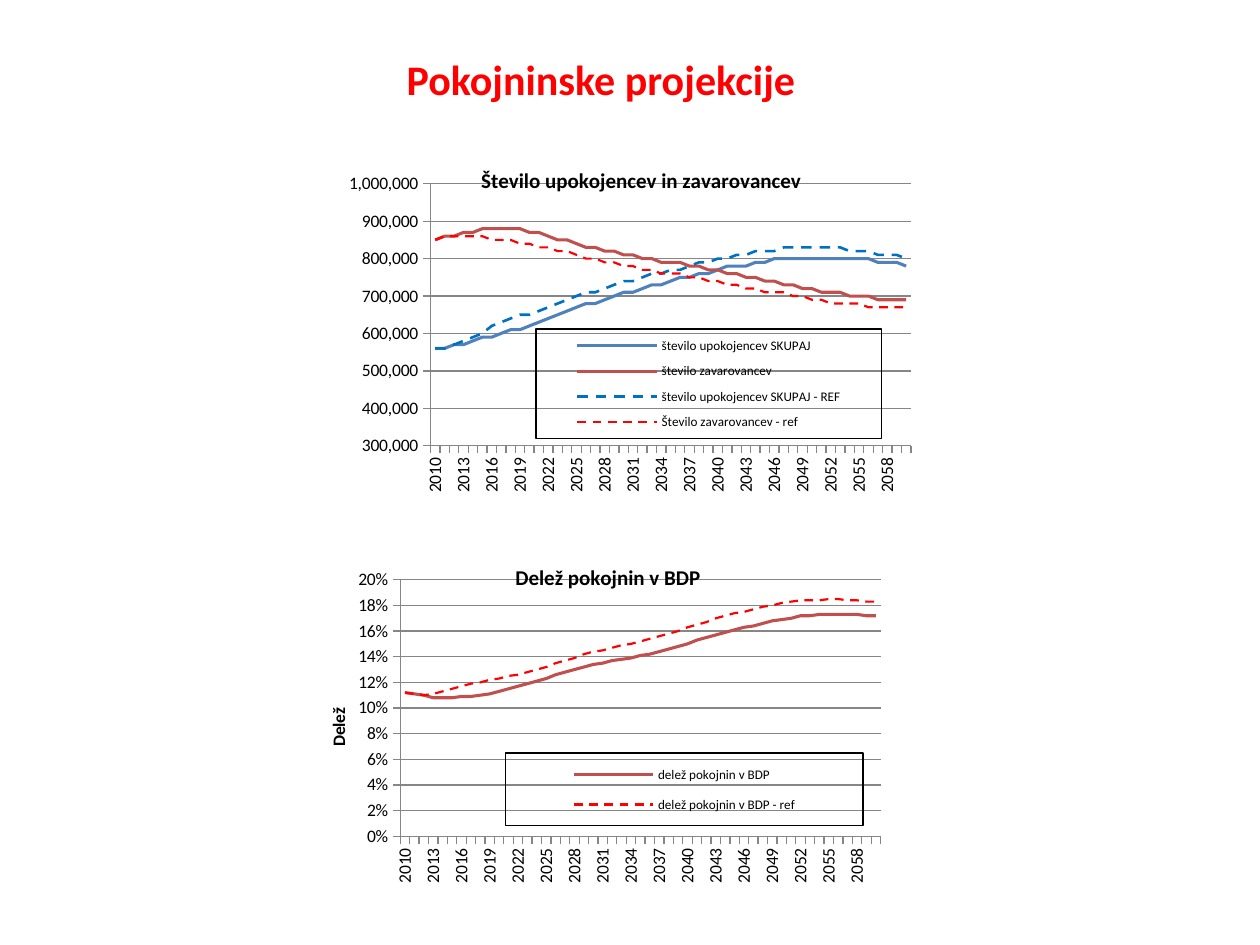
from dataclasses import dataclass

from lxml.etree import SubElement
from pptx import Presentation
from pptx.chart.data import CategoryChartData as ChartData
from pptx.dml.color import RGBColor
from pptx.enum.chart import XL_CHART_TYPE as Kind, XL_LEGEND_POSITION as Side
from pptx.enum.chart import XL_TICK_MARK as Tick
from pptx.enum.dml import MSO_LINE_DASH_STYLE as Dash
from pptx.enum.text import MSO_ANCHOR as Anchor, PP_ALIGN as Align
from pptx.oxml.ns import qn
from pptx.util import Pt

FONT = "Calibri"
BLACK = RGBColor(0, 0, 0)
GREY = RGBColor(0x86, 0x86, 0x86)
RED = RGBColor(0xFF, 0, 0)
BRICK = RGBColor(0xC0, 0x50, 0x4D)
STEEL = RGBColor(0x4F, 0x81, 0xBD)
BLUE = RGBColor(0, 0x70, 0xC0)
YEARS = [str(year) for year in range(2010, 2061)]
PLOT = (0.15, 0.11, 0.82, 0.74)


@dataclass
class Line:
    name: str
    color: RGBColor
    width: float
    dashed: bool
    values: list[int]


@dataclass
class Graph:
    title: str
    title_at: tuple
    box: tuple
    legend: tuple
    low: float
    high: float
    step: float
    form: str
    scale: float
    lines: list[Line]
    label: str = ""


# Pension share, in thousandths of GDP
SHARE = Graph(
    "Delež pokojnin v BDP", (0.34, 0.05), (178.5, 309.6, 334.8, 198),
    (0.33, 0.61, 0.61, 0.21), 0, 0.2, 0.02, "0%", 1 / 1000, [
        Line("delež pokojnin v BDP", BRICK, 1.75, False, [
            112, 111, 110, 108, 108, 108, 109, 109, 110, 111, 113, 115, 117,
            119, 121, 123, 126, 128, 130, 132, 134, 135, 137, 138, 139, 141,
            142, 144, 146, 148, 150, 153, 155, 157, 159, 161, 163, 164, 166,
            168, 169, 170, 172, 172, 173, 173, 173, 173, 173, 172, 172]),
        Line("delež pokojnin v BDP - ref", RED, 1.25, True, [
            112, 111, 110, 111, 113, 115, 117, 119, 120, 122, 123, 125, 126,
            128, 130, 132, 135, 137, 139, 142, 144, 145, 147, 149, 150, 152,
            154, 156, 158, 160, 163, 165, 167, 170, 172, 174, 175, 177, 179,
            180, 182, 183, 184, 184, 184, 185, 185, 184, 184, 183, 183]),
    ], "Delež")

# Pensioners and insured persons, in tens of thousands
COUNT = Graph(
    "Število upokojencev in zavarovancev", (0.23, 0.05),
    (195.8, 82.8, 334.8, 202.3), (0.33, 0.52, 0.59, 0.31),
    300000, 1000000, 100000, "#,##0", 10000, [
        Line("število upokojencev SKUPAJ", STEEL, 1.75, False, [
            56, 56, 57, 57, 58, 59, 59, 60, 61, 61, 62, 63, 64, 65, 66, 67,
            68, 68, 69, 70, 71, 71, 72, 73, 73, 74, 75, 75, 76, 76, 77, 78,
            78, 78, 79, 79, 80, 80, 80, 80, 80, 80, 80, 80, 80, 80, 80, 79,
            79, 79, 78]),
        Line("število zavarovancev", BRICK, 1.75, False, [
            85, 86, 86, 87, 87, 88, 88, 88, 88, 88, 87, 87, 86, 85, 85, 84,
            83, 83, 82, 82, 81, 81, 80, 80, 79, 79, 79, 78, 78, 77, 77, 76,
            76, 75, 75, 74, 74, 73, 73, 72, 72, 71, 71, 71, 70, 70, 70, 69,
            69, 69, 69]),
        Line("število upokojencev SKUPAJ - REF", BLUE, 1.5, True, [
            56, 56, 57, 58, 59, 60, 62, 63, 64, 65, 65, 66, 67, 68, 69, 70,
            71, 71, 72, 73, 74, 74, 75, 76, 76, 77, 77, 78, 79, 79, 80, 80,
            81, 81, 82, 82, 82, 83, 83, 83, 83, 83, 83, 83, 82, 82, 82, 81,
            81, 81, 80]),
        Line("Število zavarovancev - ref", RED, 1.25, True, [
            85, 86, 86, 86, 86, 86, 85, 85, 85, 84, 84, 83, 83, 82, 82, 81,
            80, 80, 79, 79, 78, 78, 77, 77, 76, 76, 76, 75, 75, 74, 74, 73,
            73, 72, 72, 71, 71, 71, 70, 70, 69, 69, 68, 68, 68, 68, 67, 67,
            67, 67, 67]),
    ])


def style(font, size: float, color: RGBColor = BLACK, bold: bool = False) -> None:
    font.name, font.size, font.bold = FONT, Pt(size), bold
    font.color.rgb = color


def place(node, spot: tuple, inner: bool = False) -> None:
    """Give a chart part a manual layout in fractions of the chart."""
    for old in node.findall(qn("c:layout")):
        node.remove(old)
    layout = SubElement(node, qn("c:layout"))
    over = node.find(qn("c:overlay"))
    if over is None:
        node.insert(0, layout)
    else:
        over.addprevious(layout)
    manual = SubElement(layout, qn("c:manualLayout"))
    if inner:
        SubElement(manual, qn("c:layoutTarget"), val="inner")
    for key in "xy":
        SubElement(manual, qn(f"c:{key}Mode"), val="edge")
    for key, part in zip("xywh", spot):
        SubElement(manual, qn(f"c:{key}"), val=str(part))


def set_title(title, text: str, size: float, spot: tuple) -> None:
    title.text_frame.text = text
    style(title.text_frame.paragraphs[0].runs[0].font, size, bold=True)
    place(title._element, spot)


def set_axes(chart, graph: Graph) -> None:
    years, scale = chart.category_axis, chart.value_axis
    for axis in (years, scale):
        axis.major_tick_mark, axis.minor_tick_mark = Tick.OUTSIDE, Tick.NONE
        axis.format.line.color.rgb = GREY
        style(axis.tick_labels.font, 10)
    # Upright labels for every third year, one tick a year
    node = years._element
    node.find(qn("c:txPr")).find(qn("a:bodyPr")).set("rot", "-5400000")
    last = node.find(qn("c:noMultiLvlLbl"))
    for tag, gap in (("c:tickLblSkip", "3"), ("c:tickMarkSkip", "1")):
        skip = SubElement(node, qn(tag), val=gap)
        last.addprevious(skip)
    scale.minimum_scale, scale.maximum_scale = graph.low, graph.high
    scale.major_unit = graph.step
    scale.has_major_gridlines = True
    scale.major_gridlines.format.line.color.rgb = GREY
    scale.major_gridlines.format.line.width = Pt(0.75)
    scale.tick_labels.number_format = graph.form
    scale.tick_labels.number_format_is_linked = False
    if graph.label:
        set_title(scale.axis_title, graph.label, 10, (0.02, 0.47))
        body = scale.axis_title.text_frame._txBody.find(qn("a:bodyPr"))
        body.set("rot", "-5400000")
        body.set("vert", "horz")


def set_legend(chart, spot: tuple) -> None:
    chart.has_legend = True
    legend = chart.legend
    legend.position, legend.include_in_layout = Side.RIGHT, False
    style(legend.font, 7.5)
    place(legend._element, spot)
    frame = SubElement(legend._element, qn("c:spPr"))
    legend._element.find(qn("c:txPr")).addprevious(frame)
    edge = SubElement(frame, qn("a:ln"), w=str(Pt(0.75)))
    SubElement(SubElement(edge, qn("a:solidFill")), qn("a:srgbClr"), val=str(BLACK))


def draw(slide, graph: Graph) -> None:
    data = ChartData(number_format=graph.form)
    data.categories = YEARS
    for line in graph.lines:
        data.add_series(line.name, [round(v * graph.scale, 3) for v in line.values])
    box = [Pt(n) for n in graph.box]
    chart = slide.shapes.add_chart(Kind.LINE, *box, data).chart
    style(chart.font, 10)
    chart.has_title = True
    set_title(chart.chart_title, graph.title, 12, graph.title_at)
    chart.chart_title._element.find(qn("c:overlay")).set("val", "1")
    place(chart._chartSpace.chart.plotArea, PLOT, True)
    set_axes(chart, graph)
    set_legend(chart, graph.legend)
    chart.plots[0].vary_by_categories = False
    for series, line in zip(chart.plots[0].series, graph.lines):
        series.smooth = False
        pen = series.format.line
        pen.color.rgb, pen.width = line.color, Pt(line.width)
        if line.dashed:
            pen.dash_style = Dash.DASH


def main() -> None:
    deck = Presentation()
    deck.slide_width, deck.slide_height = Pt(720), Pt(540)
    slide = deck.slides.add_slide(deck.slide_layouts[6])
    # Heading
    head = slide.shapes.add_textbox(Pt(110.9), Pt(12.2), Pt(465.1), Pt(65.5))
    frame = head.text_frame
    frame.word_wrap, frame.vertical_anchor = True, Anchor.MIDDLE
    frame.text = "Pokojninske projekcije"
    frame.paragraphs[0].alignment = Align.CENTER
    style(frame.paragraphs[0].runs[0].font, 24, RED, True)
    # Charts
    for graph in (SHARE, COUNT):
        draw(slide, graph)
    deck.save("out.pptx")


if __name__ == "__main__":
    main()
